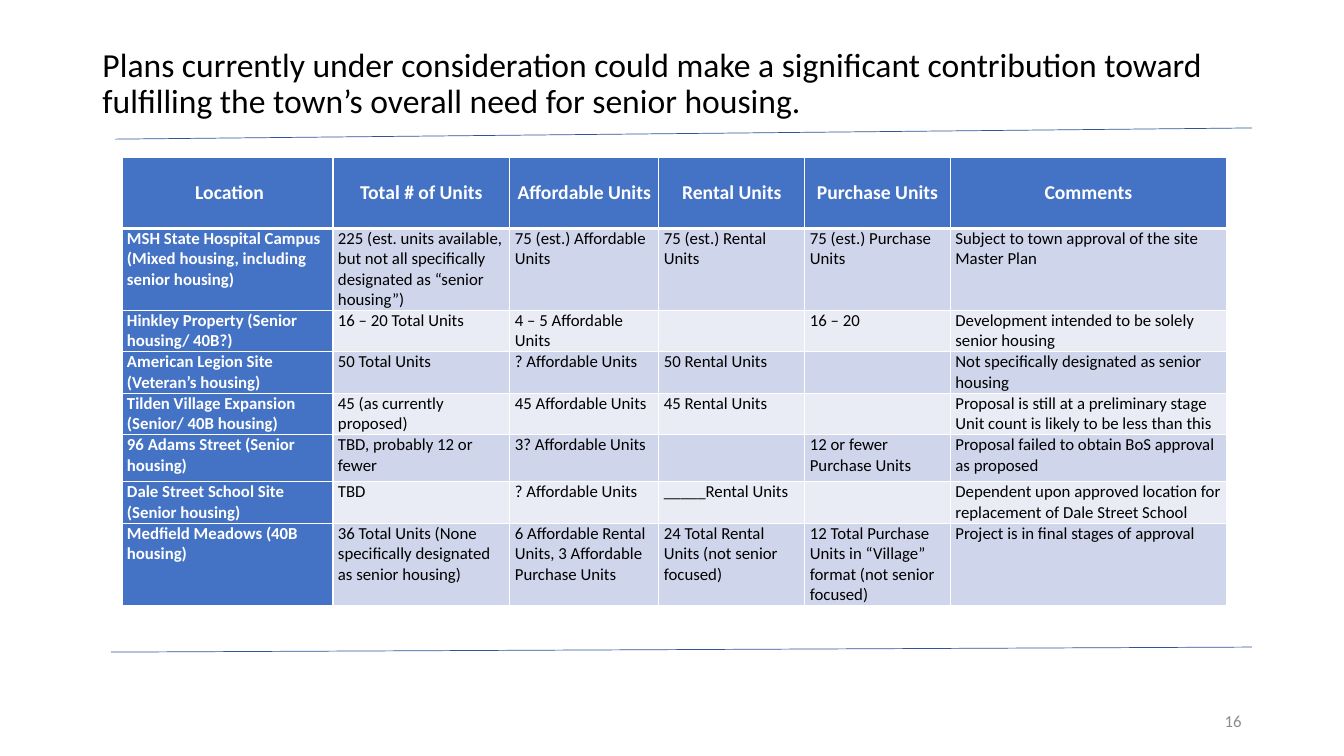
"""Build the slide on senior housing plans under consideration."""
from lxml import etree
from pptx import Presentation, util as u
from pptx.dml import color
from pptx.enum import shapes, text
from pptx.oxml import ns

HEADER = ["\u00a0Location", "Total # of Units", "Affordable Units",
          "Rental Units", "Purchase Units", "Comments"]
SITES = [
    ["MSH State Hospital Campus\v(Mixed housing, including senior housing)",
     "225 (est. units available, but not all specifically designated as “senior housing”)",
     "75 (est.) Affordable Units", "75 (est.) Rental Units", "75 (est.) Purchase Units",
     "Subject to town approval of the site Master Plan"],
    ["Hinkley Property (Senior housing/ 40B?)", "16 – 20 Total Units",
     "4 – 5 Affordable Units", "", "16 – 20",
     "Development intended to be solely senior housing"],
    ["American Legion Site (Veteran’s housing)", "50 Total Units",
     "? Affordable Units", "50 Rental Units", "",
     "Not specifically designated as senior housing"],
    ["Tilden Village Expansion (Senior/ 40B housing)", "45 (as currently proposed)",
     "45 Affordable Units", "45 Rental Units", "",
     "Proposal is still at a preliminary stage Unit count is likely to be less than this"],
    ["96 Adams Street (Senior housing)", "TBD, probably 12 or fewer",
     "3? Affordable Units", "", "12 or fewer Purchase Units",
     "Proposal failed to obtain BoS approval as proposed"],
    ["Dale Street School Site (Senior housing)", "TBD",
     "? Affordable Units", "_____Rental Units", "",
     "Dependent upon approved location for replacement of Dale Street School"],
    ["Medfield Meadows (40B housing)",
     "36 Total Units (None specifically designated as senior housing)",
     "6 Affordable Rental Units, 3 Affordable Purchase Units",
     "24 Total Rental Units (not senior focused)",
     "12 Total Purchase Units in “Village” format (not senior focused)",
     "Project is in final stages of approval"],
]
WIDTHS = [150.7, 126.4, 106.4, 104.3, 104, 197.3]
HEIGHTS = [50.7, 58.2, 29.6, 29.6, 29.6, 33.6, 29.6, 57.9]


def rgb(value):
    return color.RGBColor.from_string(value)


def assign(target, values):
    for name, value in values.items():
        setattr(target, name, value)


class Page:
    font = "Calibri"
    black, white, grey = "000000", "FFFFFF", "8C8C8C"
    blue, rule_blue = "4472C4", "2F5597"
    bands = ["CFD5EA", "E9EBF5"]

    def __init__(self, deck):
        self.slide = deck.slides.add_slide(deck.slide_layouts[5])

    def put_text(self, frame, words, size, tint, bold=False, align=text.PP_ALIGN.LEFT):
        para = frame.paragraphs[0]
        para.text = words
        para.alignment = align
        for span in para.runs:
            assign(span.font, {"name": self.font, "size": u.Pt(size), "bold": bold})
            span.font.color.rgb = rgb(tint)
        return para

    def place(self, box, left, top, width, height):
        assign(box, {"left": u.Pt(left), "top": u.Pt(top),
                     "width": u.Pt(width), "height": u.Pt(height)})
        assign(box.text_frame, {"word_wrap": True, "auto_size": text.MSO_AUTO_SIZE.NONE,
                                "vertical_anchor": text.MSO_ANCHOR.MIDDLE})

    def title(self, words, *area):
        box = self.slide.shapes.title
        self.place(box, *area)
        self.put_text(box.text_frame, words, 24, self.black).line_spacing = 0.9

    def number(self, words, *area):
        box = self.slide.shapes.add_textbox(0, 0, 0, 0)
        self.place(box, *area)
        self.put_text(box.text_frame, words, 12, self.grey, align=text.PP_ALIGN.RIGHT)

    def rule(self, *ends):
        line = self.slide.shapes.add_connector(
            shapes.MSO_CONNECTOR.STRAIGHT, *[u.Pt(end) for end in ends])
        line.line.width = u.Pt(0.5)
        line.line.color.rgb = rgb(self.rule_blue)
        etree.SubElement(line._element.spPr, ns.qn("a:effectLst"))

    def borders(self, cell, widths):
        properties = cell._tc.get_or_add_tcPr()
        for side, width in widths.items():
            edge = etree.SubElement(properties, ns.qn(f"a:ln{side}"), w=str(u.Pt(width)))
            fill = etree.SubElement(edge, ns.qn("a:solidFill"))
            etree.SubElement(fill, ns.qn("a:srgbClr"), val=self.white)

    def cell(self, cell, words, row, column):
        head, label = row == 0, row == 0 or column == 0
        assign(cell, {"margin_left": u.Pt(3.6), "margin_right": u.Pt(3.6),
                      "margin_top": 0, "margin_bottom": 0,
                      "vertical_anchor": text.MSO_ANCHOR.MIDDLE if head
                      else text.MSO_ANCHOR.TOP})
        self.borders(cell, {"L": 1, "R": 1, "T": 3 if row == 1 else 1,
                            "B": 3 if head else 1})
        cell.fill.solid()
        cell.fill.fore_color.rgb = rgb(self.blue if label else self.bands[(row - 1) % 2])
        self.put_text(cell.text_frame, words, 14 if head else 12,
                      self.white if label else self.black, label,
                      text.PP_ALIGN.CENTER if head else text.PP_ALIGN.LEFT)

    def table(self, rows, widths, heights, left, top):
        frame = self.slide.shapes.add_table(
            len(rows), len(widths), u.Pt(left), u.Pt(top),
            u.Pt(sum(widths)), u.Pt(sum(heights)))
        grid = frame.table
        for column, width in zip(grid.columns, widths):
            column.width = u.Pt(width)
        for row, height in zip(grid.rows, heights):
            row.height = u.Pt(height)
        for row, entries in enumerate(rows):
            for column, words in enumerate(entries):
                self.cell(grid.cell(row, column), words, row, column)


def main():
    deck = Presentation()
    assign(deck, {"slide_width": u.Pt(960), "slide_height": u.Pt(540)})
    page = Page(deck)
    page.title("Plans currently under consideration could make a significant contribution "
               "toward fulfilling the town’s overall need for senior housing.",
               66, 31, 828, 59)
    page.rule(79.2, 465.8, 894.2, 462.2)
    page.rule(82.1, 99.4, 894.2, 91.4)
    page.number("16", 678, 500.4, 216, 28.8)
    page.table([HEADER] + SITES, WIDTHS, HEIGHTS, 87.1, 112.5)
    deck.save("out.pptx")


if __name__ == "__main__":
    main()
